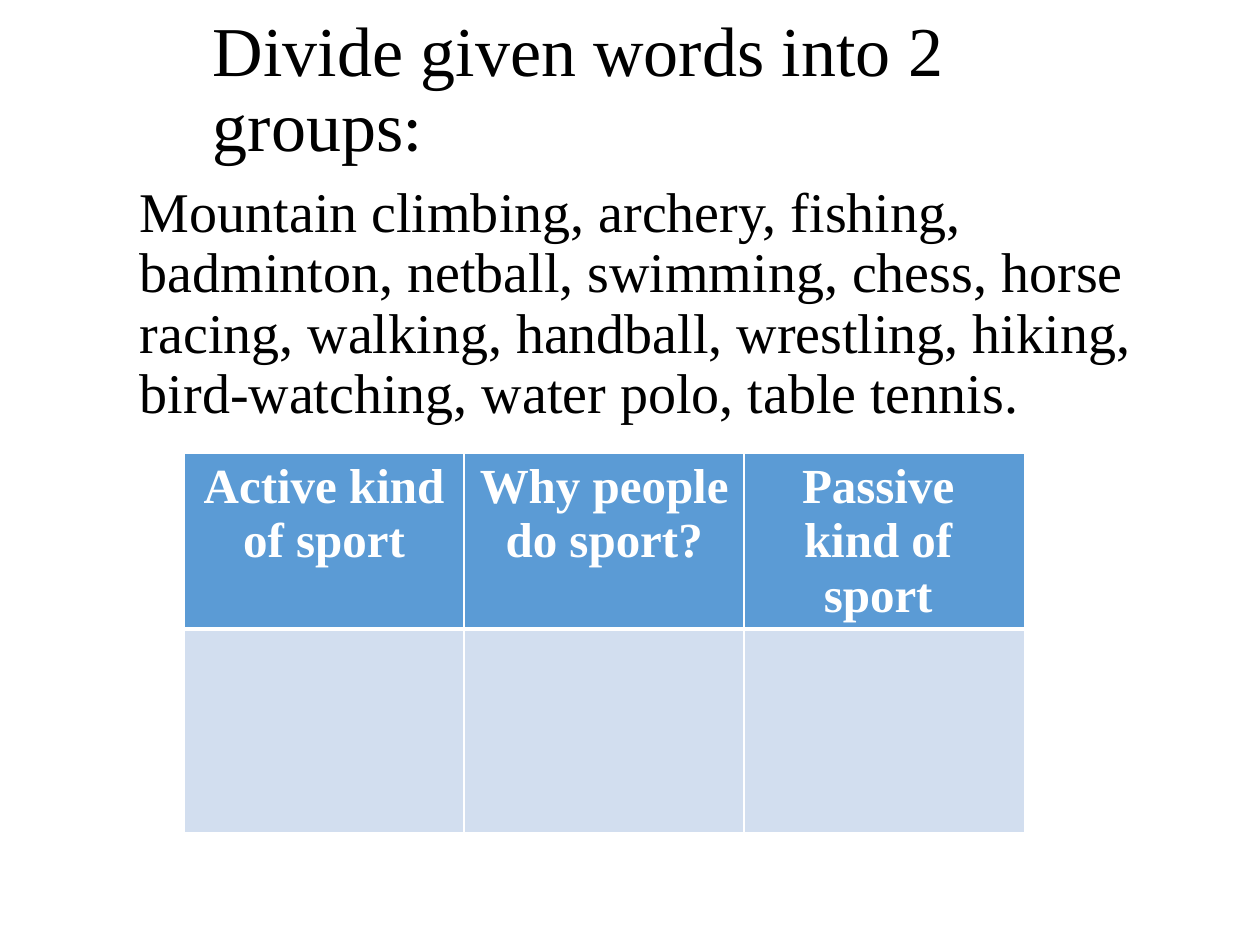
import pptx
import pptx.util
import pptx.dml.color
import pptx.enum.text
import pptx.oxml.ns
import lxml.etree

Inches = pptx.util.Inches
Pt = pptx.util.Pt
ALIGN = pptx.enum.text.PP_ALIGN
ANCHOR = pptx.enum.text.MSO_ANCHOR
FONT = "Times New Roman"
COLORS = {"ink": "000000", "paper": "FFFFFF", "head": "5B9BD5", "cell": "D2DEEF"}

WORDS = (
    "Mountain climbing, archery, fishing, badminton, netball, swimming, "
    "chess, horse racing, walking, handball, wrestling, hiking, "
    "bird-watching, water polo, table tennis."
)
# Each heading is a list of lines
HEADS = [
    ["Active kind of sport"],
    ["Why people do sport?"],
    ["Passive ", "kind of ", "sport "],
]


def color(name):
    return pptx.dml.color.RGBColor.from_string(COLORS[name])


def add_run(para, text, size, tint="ink", face=FONT, bold=False):
    run = para.add_run()
    run.text = text
    run.font.name = face
    run.font.size = Pt(size)
    run.font.bold = bold
    run.font.color.rgb = color(tint)


def set_holder(shape, box, anchor):
    """Place a placeholder and return its first paragraph."""
    shape.left, shape.top, shape.width, shape.height = map(Inches, box)
    frame = shape.text_frame
    frame.word_wrap = True
    frame.auto_size = pptx.enum.text.MSO_AUTO_SIZE.NONE
    frame.vertical_anchor = anchor
    para = frame.paragraphs[0]
    para.alignment = ALIGN.LEFT
    para.line_spacing = 0.9
    para.space_before = Pt(0)
    return para


def drop_bullet(para):
    props = para._p.get_or_add_pPr()
    props.set("marL", "0")
    props.set("indent", "0")
    lxml.etree.SubElement(props, pptx.oxml.ns.qn("a:buNone"))


def add_edges(cell, base):
    """Draw white cell borders, with the given bottom width."""
    props = cell._tc.get_or_add_tcPr()
    for side, width in zip("LRTB", (1, 1, 1, base)):
        line = lxml.etree.SubElement(
            props, pptx.oxml.ns.qn("a:ln" + side), w=str(Pt(width)))
        fill = lxml.etree.SubElement(line, pptx.oxml.ns.qn("a:solidFill"))
        lxml.etree.SubElement(
            fill, pptx.oxml.ns.qn("a:srgbClr"), val=COLORS["paper"])


def style_cell(cell, tint, base):
    add_edges(cell, base)
    cell.fill.solid()
    cell.fill.fore_color.rgb = color(tint)


def add_grid(slide):
    frame = slide.shapes.add_table(
        2, len(HEADS), Inches(1.46), Inches(3.6), Inches(6.67), Inches(3.01))
    table = frame.table
    for row, height in zip(table.rows, (1.39, 1.62)):
        row.height = Inches(height)
    for col, lines in enumerate(HEADS):
        head = table.cell(0, col)
        style_cell(head, "head", 3)
        para = head.text_frame.paragraphs[0]
        para.alignment = ALIGN.CENTER
        for index, text in enumerate(lines):
            if index:
                para.add_line_break()
            add_run(para, text, 28, "paper", bold=True)
        style_cell(table.cell(1, col), "cell", 1)


def main():
    deck = pptx.Presentation()
    deck.slide_width, deck.slide_height = Inches(10), Inches(7.5)
    slide = deck.slides.add_slide(deck.slide_layouts[1])
    slide.background.fill.solid()
    slide.background.fill.fore_color.rgb = color("paper")

    # Title
    para = set_holder(slide.shapes.title, (1.59, 0.18, 7.72, 1.09), ANCHOR.MIDDLE)
    add_run(para, "Divide given words into 2 groups", 40)
    add_run(para, ":", 40, face="Calibri")

    # Word list
    para = set_holder(slide.placeholders[1], (1.01, 1.41, 8.3, 5.35), ANCHOR.TOP)
    drop_bullet(para)
    add_run(para, WORDS, 32)

    # Sorting table
    add_grid(slide)
    deck.save("out.pptx")


if __name__ == "__main__":
    main()
